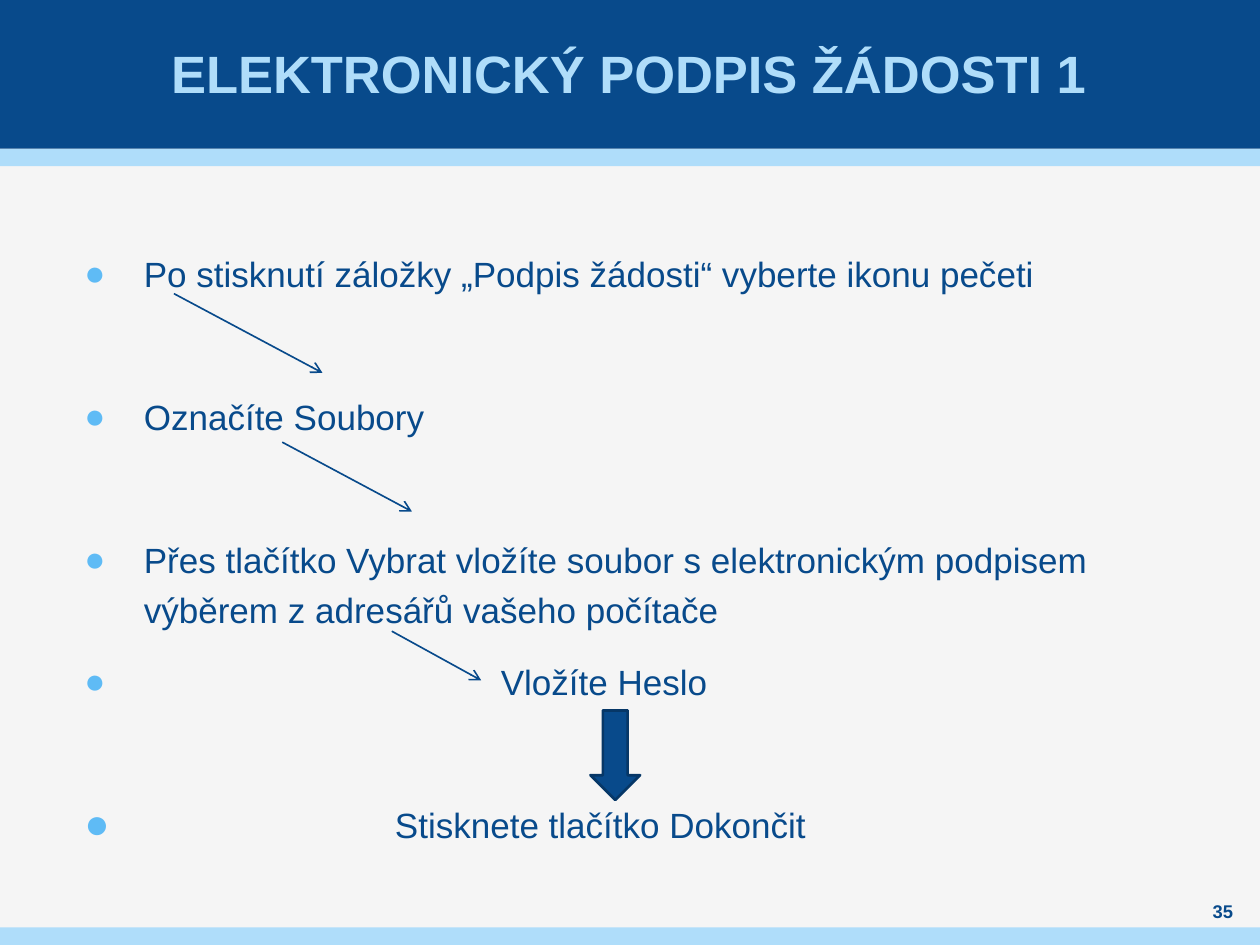
from dataclasses import dataclass

from lxml.etree import SubElement
from pptx import Presentation
from pptx.dml.color import RGBColor
from pptx.enum.shapes import MSO_CONNECTOR, MSO_SHAPE
from pptx.enum.text import MSO_ANCHOR, MSO_AUTO_SIZE, PP_ALIGN
from pptx.oxml.ns import qn
from pptx.util import Pt


@dataclass(frozen=True)
class Theme:
    font: str = "Arial"
    background: str = "F5F5F5"
    navy: str = "084A8B"
    outline: str = "063767"
    pale: str = "AFDDFA"
    bullet: str = "5FBBF5"
    title_size: float = 30
    body_size: float = 20
    number_size: float = 10.5
    line_height: float = 28.8
    gap: float = 6


class SlideBuilder:
    def __init__(self, slide, theme):
        self.slide = slide
        self.theme = theme
        fill = slide.background.fill
        fill.solid()
        fill.fore_color.rgb = RGBColor.from_string(theme.background)

    def block(self, kind, box, color, outline=None):
        shape = self.slide.shapes.add_shape(kind, *map(Pt, box))
        shape.shadow.inherit = False
        shape.fill.solid()
        shape.fill.fore_color.rgb = RGBColor.from_string(color)
        if outline:
            shape.line.color.rgb = RGBColor.from_string(outline)
            shape.line.width = Pt(1.5)
        else:
            shape.line.fill.background()
        return shape

    def band(self, top, height, color):
        shape = self.block(MSO_SHAPE.RECTANGLE, (0, top, 720, height), color)
        # Bands lie behind the title placeholder
        self.slide.shapes._spTree.insert(2, shape._element)

    def frame(self, shape, anchor, side_inset=0):
        frame = shape.text_frame
        frame.word_wrap = True
        frame.auto_size = MSO_AUTO_SIZE.NONE
        frame.vertical_anchor = anchor
        frame.margin_left = frame.margin_right = Pt(side_inset)
        frame.margin_top = frame.margin_bottom = 0
        return frame

    def run(self, paragraph, text, size, color, bold=False):
        run = paragraph.add_run()
        run.text = text
        run.font.name = self.theme.font
        run.font.size = Pt(size)
        run.font.bold = bold
        run.font.color.rgb = RGBColor.from_string(color)

    def title(self, text, box):
        shape = self.slide.shapes.title
        shape.left, shape.top, shape.width, shape.height = map(Pt, box)
        paragraph = self.frame(shape, MSO_ANCHOR.MIDDLE, 3).paragraphs[0]
        paragraph.alignment = PP_ALIGN.CENTER
        self.run(paragraph, text, self.theme.title_size, self.theme.pale, True)

    def slide_number(self, text, box):
        shape = self.slide.shapes.add_textbox(*map(Pt, box))
        paragraph = self.frame(shape, MSO_ANCHOR.MIDDLE).paragraphs[0]
        paragraph.alignment = PP_ALIGN.CENTER
        self.run(paragraph, text, self.theme.number_size, self.theme.navy, True)

    def bullets(self, items, box):
        theme = self.theme
        shape = self.slide.shapes.add_textbox(*map(Pt, box))
        frame = self.frame(shape, MSO_ANCHOR.TOP)
        line_step = theme.line_height + 2 * theme.gap
        for index, (text, indent, skipped_lines, bullet_scale) in enumerate(items):
            paragraph = frame.add_paragraph() if index else frame.paragraphs[0]
            paragraph.line_spacing = Pt(theme.line_height)
            paragraph.space_before = Pt(theme.gap + skipped_lines * line_step)
            paragraph.space_after = Pt(theme.gap)
            properties = paragraph._p.get_or_add_pPr()
            properties.set("marL", str(Pt(indent)))
            properties.set("indent", str(-Pt(indent)))
            color = SubElement(properties, qn("a:buClr"))
            SubElement(color, qn("a:srgbClr"), val=theme.bullet)
            SubElement(properties, qn("a:buSzPct"), val=str(bullet_scale * 1000))
            SubElement(properties, qn("a:buFont"), typeface=theme.font)
            SubElement(properties, qn("a:buChar"), char="●")
            self.run(paragraph, text, theme.body_size, theme.navy)

    def arrow(self, *ends):
        connector = self.slide.shapes.add_connector(
            MSO_CONNECTOR.STRAIGHT, *map(Pt, ends))
        connector.line.color.rgb = RGBColor.from_string(self.theme.navy)
        connector.line.width = Pt(0.94)
        SubElement(connector.line._get_or_add_ln(), qn("a:tailEnd"), type="arrow")
        SubElement(connector._element.spPr, qn("a:effectLst"))


def main():
    presentation = Presentation()
    presentation.slide_width, presentation.slide_height = Pt(720), Pt(540)
    theme = Theme()
    title_only = presentation.slide_layouts[5]
    builder = SlideBuilder(presentation.slides.add_slide(title_only), theme)

    # Header and footer bands
    builder.band(0, 85, theme.navy)
    builder.band(85, 10, theme.pale)
    builder.band(530, 10, theme.pale)
    builder.title("ELEKTRONICKÝ PODPIS ŽÁDOSTI 1", (28, 0, 663, 83))

    # Steps: text, indent, skipped lines before, bullet size in percent
    builder.bullets([
        ("Po stisknutí záložky „Podpis žádosti“ vyberte ikonu pečeti", 34, 0, 100),
        ("Označíte Soubory", 34, 1, 100),
        ("Přes tlačítko Vybrat vložíte soubor s elektronickým podpisem "
         "výběrem z adresářů vašeho počítače", 34, 1, 100),
        ("Vložíte Heslo", 238, 0, 100),
        ("Stisknete tlačítko Dokončit", 177.5, 1, 120),
    ], (48.2, 139.7, 635, 340))
    builder.slide_number("35", (680.4, 513.4, 36.7, 14.4))

    # Arrows from step to step
    builder.arrow(161.3, 252.7, 235.4, 292.3)
    builder.arrow(223.9, 360.7, 275, 388.8)
    builder.block(MSO_SHAPE.DOWN_ARROW, (337.4, 406, 28.4, 51.2),
                  theme.navy, theme.outline)
    builder.arrow(99.4, 167.8, 184.3, 213.1)

    presentation.save("out.pptx")


if __name__ == "__main__":
    main()
